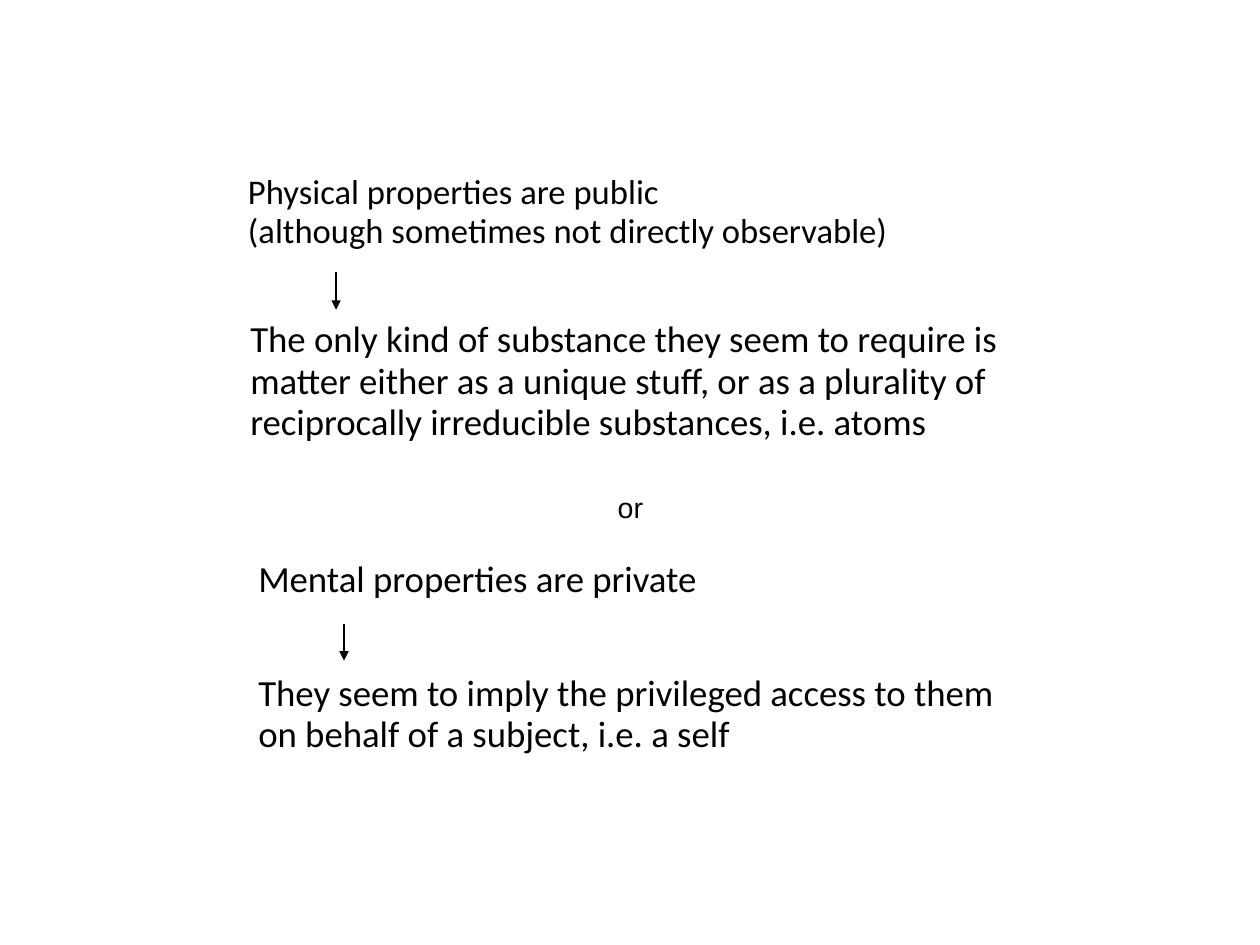
"""Builds a slide contrasting physical and mental properties."""
from lxml.etree import SubElement
from pptx import Presentation
from pptx.dml.color import RGBColor
from pptx.enum.shapes import MSO_CONNECTOR
from pptx.enum.text import PP_ALIGN
from pptx.oxml.ns import qn
from pptx.util import Inches, Pt

COLORS = {"ink": "000000", "background": "FFFFFF"}
INK = RGBColor.from_string(COLORS["ink"])
CM_PER_INCH = 2.54

presentation = Presentation()
presentation.slide_width = Inches(28 / CM_PER_INCH)
presentation.slide_height = Inches(21 / CM_PER_INCH)
slide = presentation.slides.add_slide(presentation.slide_layouts[6])
slide.background.fill.solid()
slide.background.fill.fore_color.rgb = RGBColor.from_string(COLORS["background"])

statements = [
    (2.09, 1.48, 6.9, 0.76, "Calibri", 21.8, PP_ALIGN.LEFT,
     "Physical properties are public\n(although sometimes not directly observable)"),
    (2.11, 2.76, 7.01, 1.31, "Calibri", 23.2, PP_ALIGN.LEFT,
     "The only kind of substance they seem to require is matter either as a unique stuff, "
     "or as a plurality of reciprocally irreducible substances, i.e. atoms"),
    (5.07, 4.27, 0.89, 0.37, "Arial", 18, PP_ALIGN.CENTER, "or"),
    (2.18, 4.86, 7.18, 0.47, "Calibri", 23.2, PP_ALIGN.LEFT,
     "Mental properties are private"),
    (2.18, 5.85, 6.89, 1.24, "Calibri", 23.2, PP_ALIGN.LEFT,
     "They seem to imply the privileged access to them on behalf of a subject, i.e. a self"),
]
for left, top, width, height, font_name, size, alignment, text in statements:
    text_box = slide.shapes.add_textbox(Inches(left), Inches(top), Inches(width), Inches(height))
    text_frame = text_box.text_frame
    text_frame.word_wrap = True
    text_frame.margin_left = text_frame.margin_right = Inches(0.08)
    text_frame.margin_top = text_frame.margin_bottom = Inches(0.04)
    text_frame.text = text
    for paragraph in text_frame.paragraphs:
        paragraph.alignment = alignment
        paragraph.line_spacing = 0.93
        for run in paragraph.runs:
            run.font.name = font_name
            run.font.size = Pt(size)
            run.font.color.rgb = INK

for x, start, end in [(2.94, 2.38, 2.71), (3.01, 5.46, 5.78)]:
    arrow = slide.shapes.add_connector(
        MSO_CONNECTOR.STRAIGHT, Inches(x), Inches(start), Inches(x), Inches(end))
    arrow.line.color.rgb = INK
    arrow.line.width = Pt(0.75)
    properties = arrow._element.spPr
    SubElement(properties.find(qn("a:ln")), qn("a:tailEnd"), type="triangle")
    SubElement(properties, qn("a:effectLst"))

presentation.save("out.pptx")
